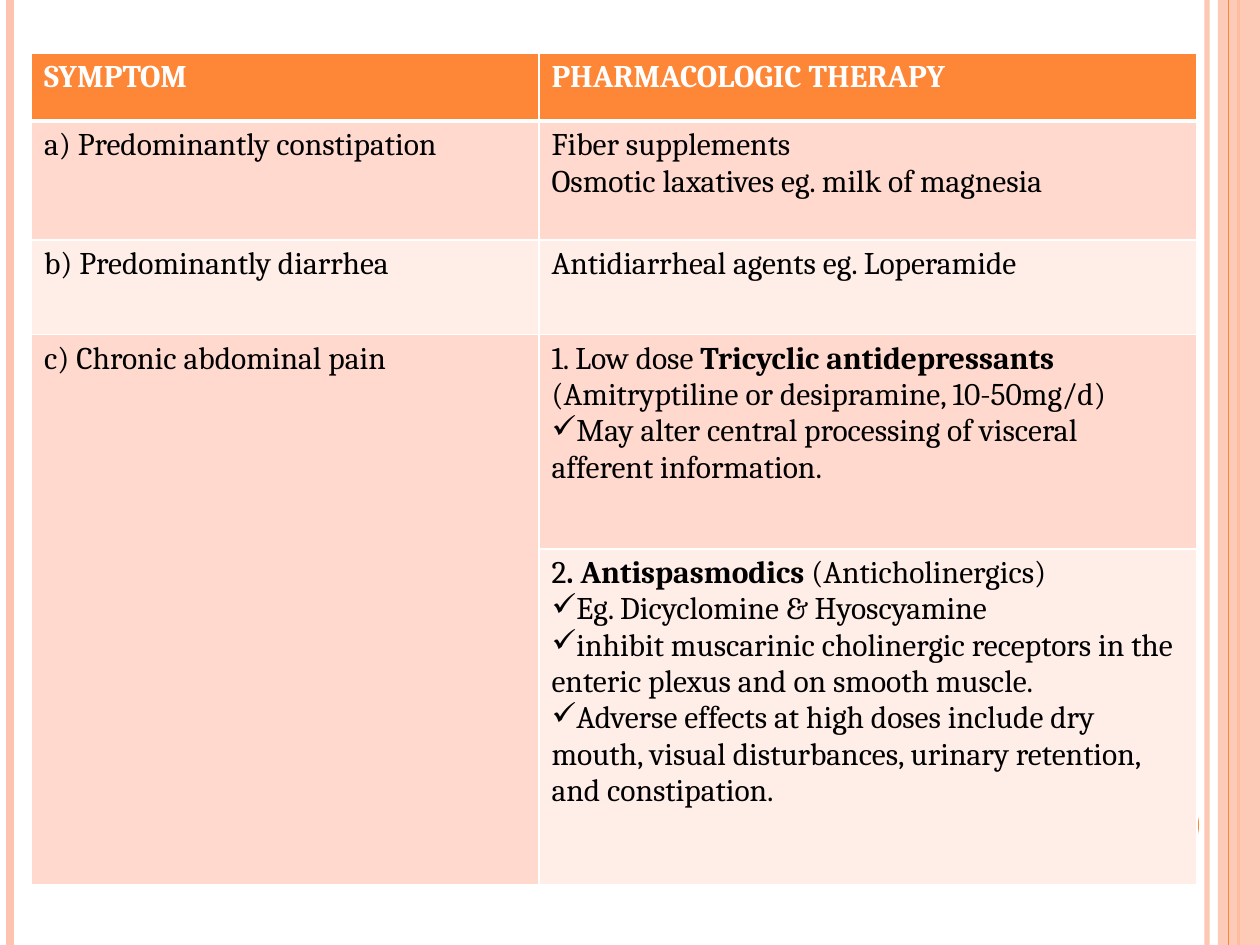
"""Build a slide with a table of symptoms and their drug therapy."""
from pptx import Presentation
from pptx.dml.color import RGBColor as RGB
from pptx.enum.shapes import MSO_CONNECTOR as Link, MSO_SHAPE as Shape
from pptx.oxml.ns import qn
from pptx.oxml.xmlchemy import OxmlElement as Node
from pptx.util import Pt

WHITE = RGB(0xFF, 0xFF, 0xFF)
BLACK = RGB(0, 0, 0)
ORANGE = RGB(0xFE, 0x86, 0x37)
PEACH = RGB(0xFE, 0xC3, 0xAE)
BAND = RGB(0xFF, 0xD9, 0xCE)
PALE = RGB(0xFF, 0xED, 0xE8)
WIDE, HIGH = 720, 540
CHECK = "✓"

COLS = [290, 376]
ROWS = [39, 68, 54, 122.4, 192]
FILLS = [ORANGE, BAND, PALE, BAND, PALE]
CELLS = [
    [["SYMPTOM"], ["PHARMACOLOGIC THERAPY"]],
    [["a) Predominantly constipation"],
     ["Fiber supplements", "Osmotic laxatives eg. milk of magnesia"]],
    [["b) Predominantly diarrhea"], ["Antidiarrheal agents eg. Loperamide"]],
    [["c) Chronic abdominal pain"],
     [("1. Low dose ", "Tricyclic antidepressants ",
       "(Amitryptiline or desipramine, 10-50mg/d)"),
      CHECK + "May alter central processing of visceral afferent information."]],
    [None,
     [("2", ". Antispasmodics ", "(Anticholinergics)"),
      CHECK + "Eg. Dicyclomine & Hyoscyamine",
      CHECK + "inhibit muscarinic cholinergic receptors in the enteric plexus "
      "and on smooth muscle.",
      CHECK + "Adverse effects at high doses include dry mouth, visual "
      "disturbances, urinary retention, and constipation."]],
]
BACK_LINES = [(689.76, PEACH, 3, 93), (5.76, PEACH, 4.5, 100), (707.76, ORANGE, 1.5, 100)]
FRONT_LINE = (702, ORANGE, 0.75, 100)


def fade(shape, alpha):
    for tint in shape._element.spPr.iter(qn("a:srgbClr")):
        node = Node("a:alpha")
        node.set("val", str(alpha * 1000))
        tint.append(node)


def add_line(slide, x, color, width, alpha):
    line = slide.shapes.add_connector(Link.STRAIGHT, Pt(x), 0, Pt(x), Pt(HIGH))
    line.line.color.rgb = color
    line.line.width = Pt(width)
    line._element.spPr.append(Node("a:effectLst"))
    if alpha < 100:
        fade(line, alpha)


def add_block(slide, kind, box, color):
    block = slide.shapes.add_shape(kind, *map(Pt, box))
    block.shadow.inherit = False
    block.fill.solid()
    block.fill.fore_color.rgb = color
    block.line.fill.background()
    return block


def add_text(frame, paras, *, color=BLACK, bold=False, size=18, font="Cambria"):
    for i, item in enumerate(paras):
        para = frame.add_paragraph() if i else frame.paragraphs[0]
        parts = (item,) if isinstance(item, str) else item
        if parts[0].startswith(CHECK):
            parts = (parts[0].removeprefix(CHECK),)
            props = para._p.get_or_add_pPr()
            props.set("marL", "0")
            props.set("indent", "0")
            mark = Node("a:buChar")
            mark.set("char", CHECK)
            props.append(mark)
        for j, part in enumerate(parts):
            run = para.add_run()
            run.text = part
            run.font.name = font
            run.font.size = Pt(size)
            run.font.bold = bold or j == 1
            run.font.color.rgb = color


def add_edges(cell, low):
    props = cell._tc.get_or_add_tcPr()
    for i, (side, width) in enumerate(zip("LRTB", (1, 1, 1, low))):
        edge = Node("a:ln" + side)
        edge.set("w", str(Pt(width)))
        fill, tint = Node("a:solidFill"), Node("a:srgbClr")
        tint.set("val", str(WHITE))
        fill.append(tint)
        edge.append(fill)
        props.insert(i, edge)


def add_grid(slide):
    box = map(Pt, (18, 30.24, sum(COLS), sum(ROWS)))
    grid = slide.shapes.add_table(len(ROWS), len(COLS), *box).table
    grid.first_row = grid.horz_banding = False
    for col, width in zip(grid.columns, COLS):
        col.width = Pt(width)
    for row, height in zip(grid.rows, ROWS):
        row.height = Pt(height)
    grid.cell(3, 0).merge(grid.cell(4, 0))
    for r, (line, color) in enumerate(zip(CELLS, FILLS)):
        head = r == 0
        for c, paras in enumerate(line):
            cell = grid.cell(r, c)
            cell.fill.solid()
            cell.fill.fore_color.rgb = color
            add_edges(cell, 3 if head else 1)
            if paras:
                add_text(cell.text_frame, paras, bold=head, color=WHITE if head else BLACK)


def main():
    deck = Presentation()
    deck.slide_width, deck.slide_height = Pt(WIDE), Pt(HIGH)
    slide = deck.slides.add_slide(deck.slide_layouts[6])
    for line in BACK_LINES:
        add_line(slide, *line)
    fade(add_block(slide, Shape.RECTANGLE, (696, 0, 24, HIGH), PEACH), 87)
    add_line(slide, *FRONT_LINE)
    add_block(slide, Shape.OVAL, (642, 450, 43.2, 43.2), ORANGE)
    add_grid(slide)
    deck.save("out.pptx")


if __name__ == "__main__":
    main()
